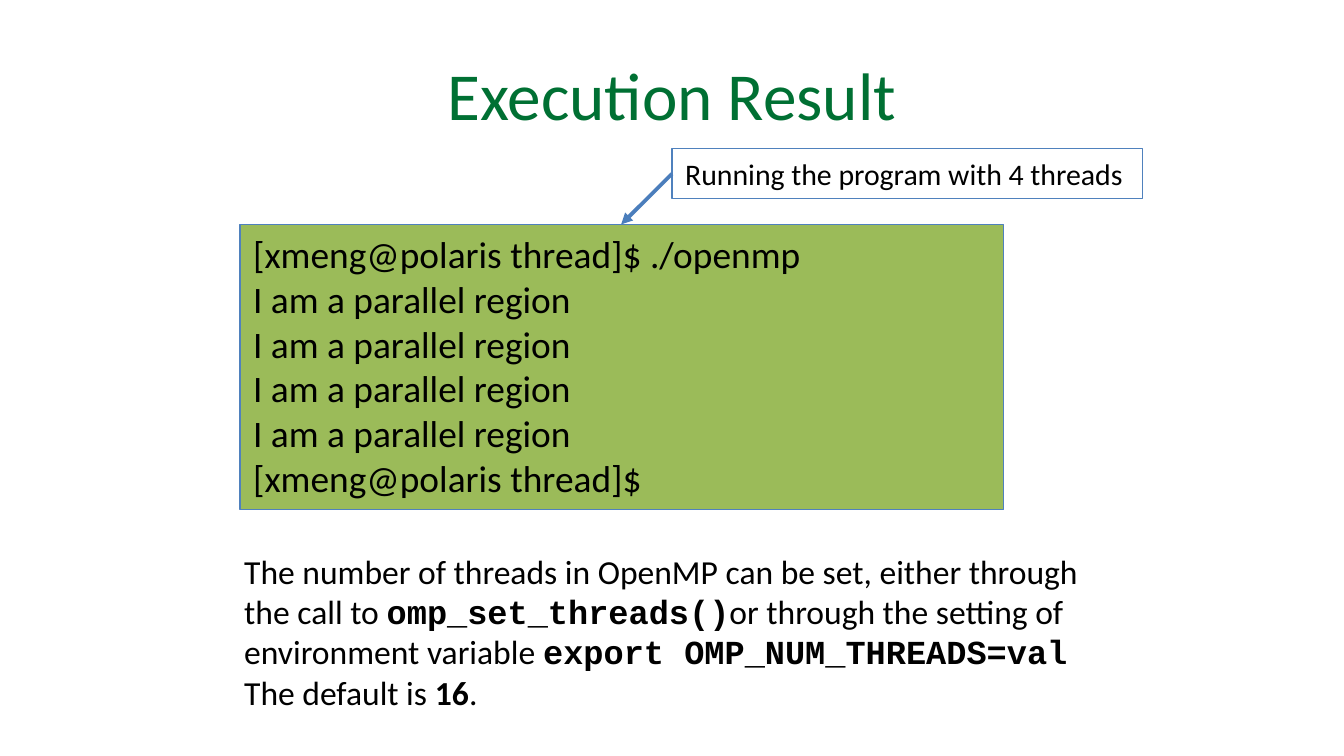
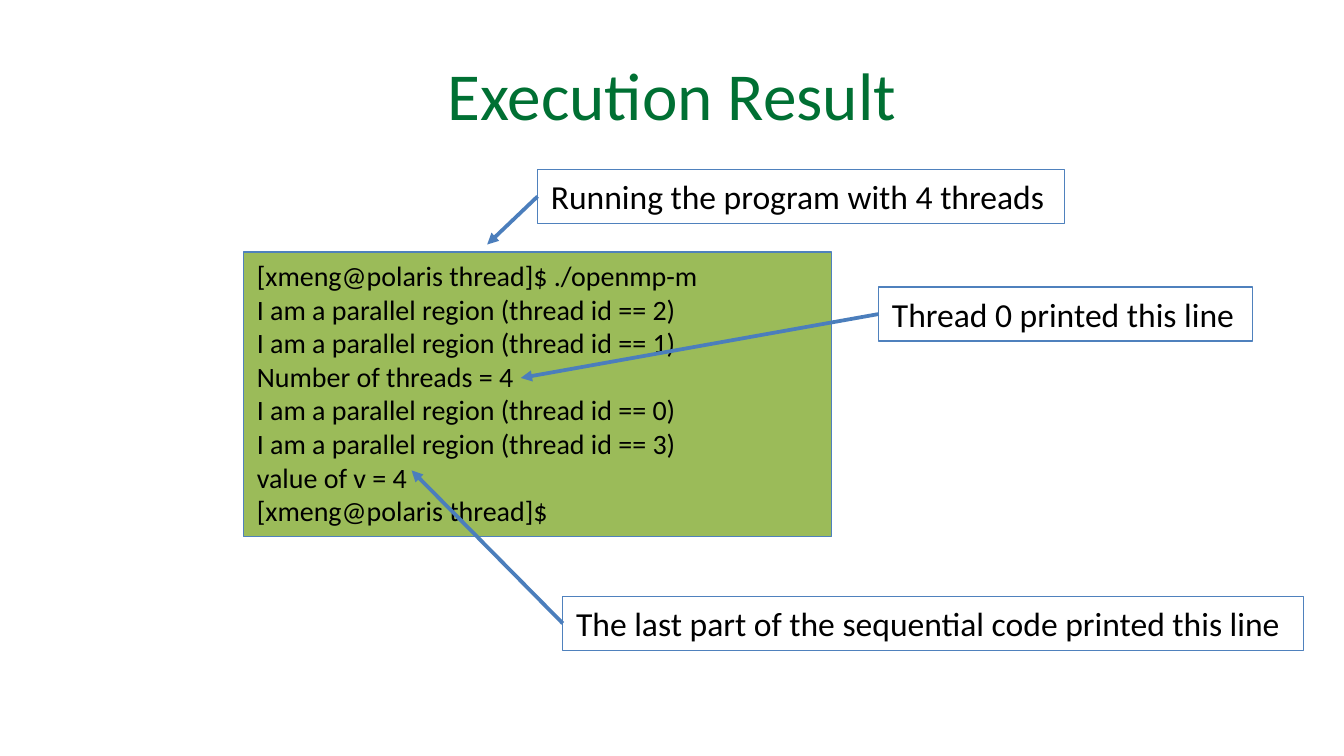
from dataclasses import dataclass

from lxml import etree
from pptx import Presentation
from pptx.dml.color import RGBColor
from pptx.enum.shapes import MSO_CONNECTOR, MSO_SHAPE
from pptx.enum.text import MSO_ANCHOR, PP_ALIGN
from pptx.oxml.ns import qn
from pptx.util import Pt

RECTANGLE = MSO_SHAPE.RECTANGLE
STRAIGHT = MSO_CONNECTOR.STRAIGHT
TOP, MIDDLE = MSO_ANCHOR.TOP, MSO_ANCHOR.MIDDLE
LEFT, CENTER = PP_ALIGN.LEFT, PP_ALIGN.CENTER
TITLE_ONLY = 5


@dataclass(frozen=True)
class Theme:
    title_color: RGBColor = RGBColor(0x00, 0x70, 0x33)
    text_color: RGBColor = RGBColor(0x00, 0x00, 0x00)
    console_fill: RGBColor = RGBColor(0x9B, 0xBB, 0x59)
    border: RGBColor = RGBColor(0x4F, 0x81, 0xBD)
    arrow: RGBColor = RGBColor(0x4B, 0x7E, 0xBC)
    body_font: str = "Calibri"
    code_font: str = "Courier New"
    title_size: float = 36
    large_size: float = 20
    body_size: float = 18
    label_size: float = 16
    small_size: float = 15
    border_width: float = 0.75
    arrow_width: float = 2


THEME = Theme()
TITLE_BOX = (36, 16.5, 648, 67.5)


def add_text(paragraph, text, size, color=THEME.text_color,
             font=THEME.body_font, bold=False):
    run = paragraph.add_run()
    run.text = text
    run.font.size = Pt(size)
    run.font.name = font
    run.font.bold = bold
    run.font.color.rgb = color


def fill_frame(frame, lines, size, anchor=TOP, align=LEFT, **text_format):
    frame.word_wrap = True
    frame.vertical_anchor = anchor
    for index, line in enumerate(lines):
        paragraph = frame.add_paragraph() if index else frame.paragraphs[0]
        paragraph.alignment = align
        add_text(paragraph, line, size, **text_format)


def add_title(slide, text):
    title = slide.shapes.title
    title.left, title.top, title.width, title.height = map(Pt, TITLE_BOX)
    fill_frame(title.text_frame, [text], THEME.title_size, anchor=MIDDLE,
               align=CENTER, color=THEME.title_color)


def add_box(slide, box, lines, size, fill=None):
    """Outlined rectangle with left-aligned lines of text."""
    shape = slide.shapes.add_shape(RECTANGLE, *map(Pt, box))
    shape.shadow.inherit = False
    if fill is None:
        shape.fill.background()
    else:
        shape.fill.solid()
        shape.fill.fore_color.rgb = fill
    shape.line.color.rgb = THEME.border
    shape.line.width = Pt(THEME.border_width)
    fill_frame(shape.text_frame, lines, size)


def add_arrow(slide, start, end):
    arrow = slide.shapes.add_connector(STRAIGHT, *map(Pt, start + end))
    arrow.line.color.rgb = THEME.arrow
    arrow.line.width = Pt(THEME.arrow_width)
    line = arrow.line._get_or_add_ln()
    etree.SubElement(line, qn("a:tailEnd"), type="triangle")
    etree.SubElement(arrow._element.spPr, qn("a:effectLst"))


def add_callout(slide, box, text, target, size=THEME.body_size):
    """Label whose arrow leaves from the middle of its left edge."""
    left, top, width, height = box
    add_box(slide, box, [text], size)
    add_arrow(slide, (left, top + height / 2), target)


def add_note(slide, box, parts):
    """Paragraph of (text, format) parts."""
    frame = slide.shapes.add_textbox(*map(Pt, box)).text_frame
    frame.word_wrap = True
    for text, text_format in parts:
        add_text(frame.paragraphs[0], text, THEME.body_size, **text_format)


def add_result_slide(presentation, console_box, console_lines, console_size):
    """Titled slide with the console output."""
    slide = presentation.slides.add_slide(
        presentation.slide_layouts[TITLE_ONLY])
    add_title(slide, "Execution Result")
    add_box(slide, console_box, console_lines, console_size,
            fill=THEME.console_fill)
    return slide


def build_first_run(presentation):
    prompt = "[xmeng@polaris thread]$"
    lines = [f"{prompt} ./openmp", *["I am a parallel region"] * 4, prompt]
    slide = add_result_slide(presentation, (128.5, 120.25, 409, 152.75),
                             lines, THEME.large_size)
    add_callout(slide, (360, 79.75, 252, 26.75),
                "Running the program with 4 threads", (332.75, 120.25),
                size=THEME.label_size)

    # Ways to set the number of threads
    code = {"font": THEME.code_font, "bold": True}
    add_note(slide, (123.75, 291.5, 471, 94.5), [
        ("The number of threads in OpenMP can be set, either through "
         "the call to ", {}),
        ("omp_set_threads()", code),
        ("or through the setting of environment variable ", {}),
        ("export OMP_NUM_THREADS=val ", code),
        ("The default is ", {}),
        ("16", {"bold": True}),
        (".", {}),
    ])


def build_thread_run(presentation):
    prompt = "[xmeng@polaris thread]$"
    regions = [f"I am a parallel region (thread id == {thread})"
               for thread in (2, 1, 0, 3)]
    lines = [f"{prompt} ./openmp-m", *regions[:2], "Number of threads = 4",
             *regions[2:], "value of v = 4", prompt]
    slide = add_result_slide(presentation, (130.5, 135, 315, 152.5),
                             lines, THEME.small_size)

    # Labels: left, top, width, text, arrow target
    label_height = 29
    callouts = [
        (288, 90.75, 282.25, "Running the program with 4 threads",
         (261, 131)),
        (470.75, 153.75, 200.25, "Thread 0 printed this line",
         (279, 202.5)),
        (301.5, 319.5, 397, "The last part of the sequential code "
         "printed this line", (220.5, 252)),
    ]
    for left, top, width, text, target in callouts:
        add_callout(slide, (left, top, width, label_height), text, target)


def main():
    presentation = Presentation()
    presentation.slide_width = Pt(720)
    presentation.slide_height = Pt(405)
    build_first_run(presentation)
    build_thread_run(presentation)
    presentation.save("out.pptx")


if __name__ == "__main__":
    main()
